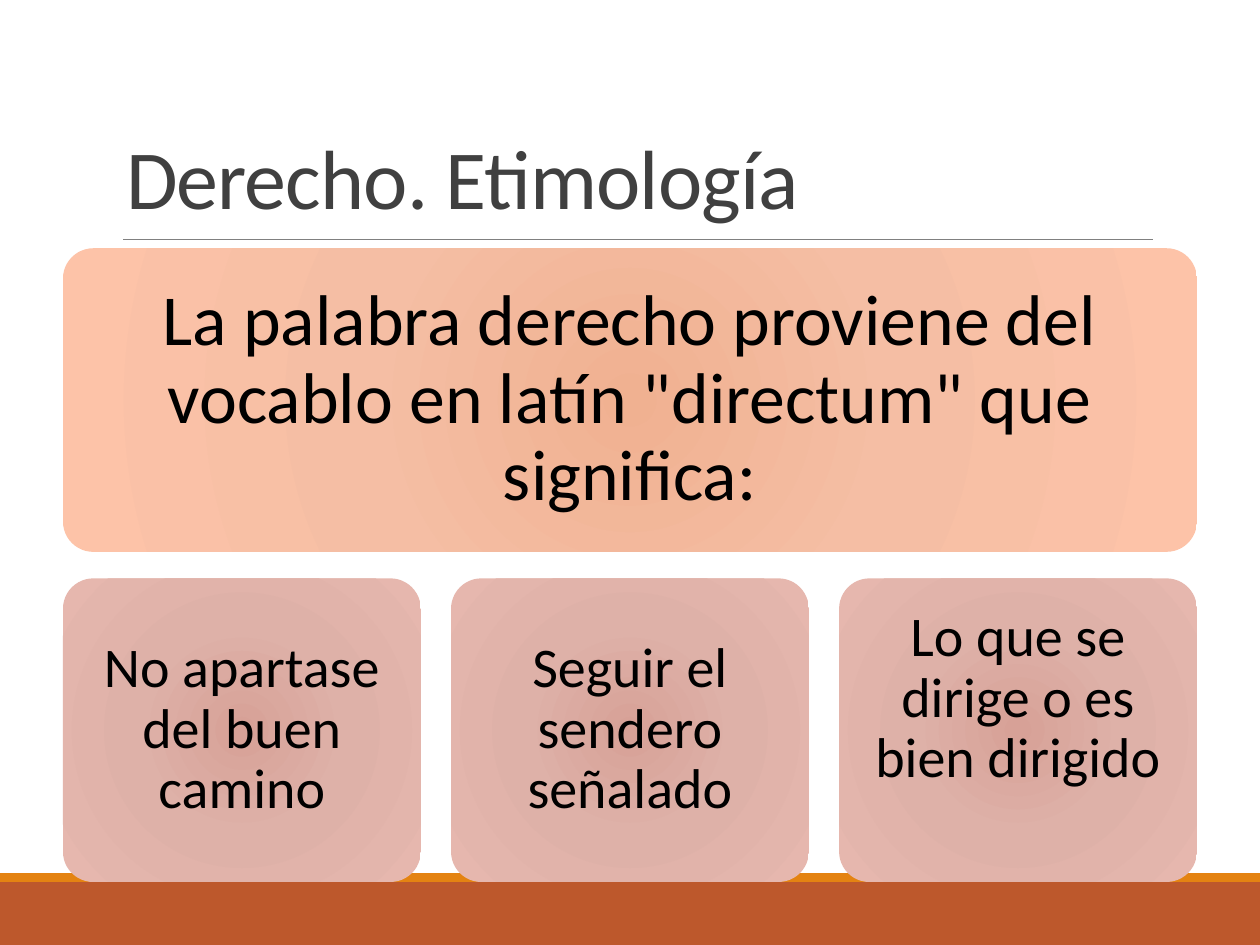
import pptx
import pptx.util
import pptx.dml.color
import pptx.enum.shapes
import pptx.enum.text
import pptx.oxml
import pptx.oxml.ns
import lxml.etree

Inches = pptx.util.Inches
Shape = pptx.enum.shapes.MSO_SHAPE
Align = pptx.enum.text.PP_ALIGN
Anchor = pptx.enum.text.MSO_ANCHOR

PEACH = ((0, "F0B191"), (45, "F5BEA4"), (100, "FDC3A8"))
ROSE = ((0, "D7A197"), (45, "DEB1A8"), (100, "E6B7AE"))
GAP = 0.24


def color(code):
    return pptx.dml.color.RGBColor.from_string(code)


def write(shape, text, size=32, ink="000000", align=Align.CENTER,
          anchor=Anchor.MIDDLE, lead=0.9, inset=0.13, foot=0, track=0):
    """Fill a shape with one paragraph; foot adds to the bottom inset."""
    frame = shape.text_frame
    frame.word_wrap = True
    frame.auto_size = pptx.enum.text.MSO_AUTO_SIZE.NONE
    frame.vertical_anchor = anchor
    frame.margin_left = frame.margin_right = frame.margin_top = Inches(inset)
    frame.margin_bottom = Inches(inset + foot)
    para = frame.paragraphs[0]
    para.alignment = align
    para.line_spacing = lead
    run = para.add_run()
    run.text = text
    run.font.name = "Calibri"
    run.font.size = pptx.util.Pt(size)
    run.font.color.rgb = color(ink)
    if track:
        run.font._element.set("spc", str(int(track * 100)))


def glow(shape, stops):
    """Give a shape a radial gradient with (percent, colour) stops."""
    shape.fill.gradient()
    grad = shape._element.spPr.find(pptx.oxml.ns.qn("a:gradFill"))
    marks = "".join(
        f'<a:gs pos="{pos * 1000}"><a:srgbClr val="{code}"/></a:gs>'
        for pos, code in stops)
    fresh = pptx.oxml.parse_xml(
        f'<a:gradFill {pptx.oxml.ns.nsdecls("a")} rotWithShape="1">'
        f'<a:gsLst>{marks}</a:gsLst><a:path path="circle"><a:fillToRect '
        'l="100000" t="100000" r="100000" b="100000"/></a:path></a:gradFill>')
    grad.getparent().replace(grad, fresh)


def add_block(slide, kind, left, top, width, height):
    shape = slide.shapes.add_shape(
        kind, Inches(left), Inches(top), Inches(width), Inches(height))
    shape.shadow.inherit = False
    shape.line.fill.background()
    return shape


def add_band(slide, left, top, width, height, edge=0.07):
    """Footer band with a thin strip along its top."""
    for y, tall, code in ((top + edge, height - edge, "BD582C"),
                          (top, edge, "E48312")):
        bar = add_block(slide, Shape.RECTANGLE, left, y, width, tall)
        bar.fill.solid()
        bar.fill.fore_color.rgb = color(code)


def add_head(slide, text, left, top, width, height):
    """Title with a rule beneath it."""
    title = slide.shapes.title
    title.left, title.top = Inches(left), Inches(top)
    title.width, title.height = Inches(width), Inches(height)
    write(title, text, size=48, ink="404040", align=Align.LEFT,
          anchor=Anchor.BOTTOM, lead=0.85, inset=0.1, track=-0.5)
    base = Inches(top + height)
    rule = slide.shapes.add_connector(
        pptx.enum.shapes.MSO_CONNECTOR.STRAIGHT,
        Inches(left + 0.08), base, Inches(left + width), base)
    rule.line.color.rgb = color("808080")
    rule.line.width = pptx.util.Pt(0.5)
    lxml.etree.SubElement(rule._element.spPr, pptx.oxml.ns.qn("a:effectLst"))


def add_card(slide, text, stops, left, top, width, height, **style):
    card = add_block(slide, Shape.ROUNDED_RECTANGLE, left, top, width, height)
    card.adjustments[0] = 0.1
    glow(card, stops)
    write(card, text, **style)


def add_tree(slide, lead, parts, left, top, width, height, row=2.41):
    """One wide card above a row of equal cards."""
    add_card(slide, lead, PEACH, left, top, width, row, size=41, inset=0.17)
    wide = (width - GAP * (len(parts) - 1)) / len(parts)
    for i, (text, foot) in enumerate(parts):
        add_card(slide, text, ROSE, left + i * (wide + GAP),
                 top + height - row, wide, row, foot=foot)


def main():
    deck = pptx.Presentation()
    deck.slide_width, deck.slide_height = Inches(10), Inches(7.5)
    slide = deck.slides.add_slide(deck.slide_layouts[5])
    add_band(slide, 0, 6.93, 10, 0.57)
    add_head(slide, "Derecho. Etimología", 0.9, 0.31, 8.25, 1.59)
    add_tree(
        slide,
        'La palabra derecho proviene del vocablo en latín "directum" '
        'que significa:',
        (("No apartase del buen camino", 0),
         ("Seguir el sendero señalado", 0),
         ("Lo que se dirige o es bien dirigido", 0.49)),
        0.5, 1.97, 9, 5.03)
    deck.save("out.pptx")


if __name__ == "__main__":
    main()
